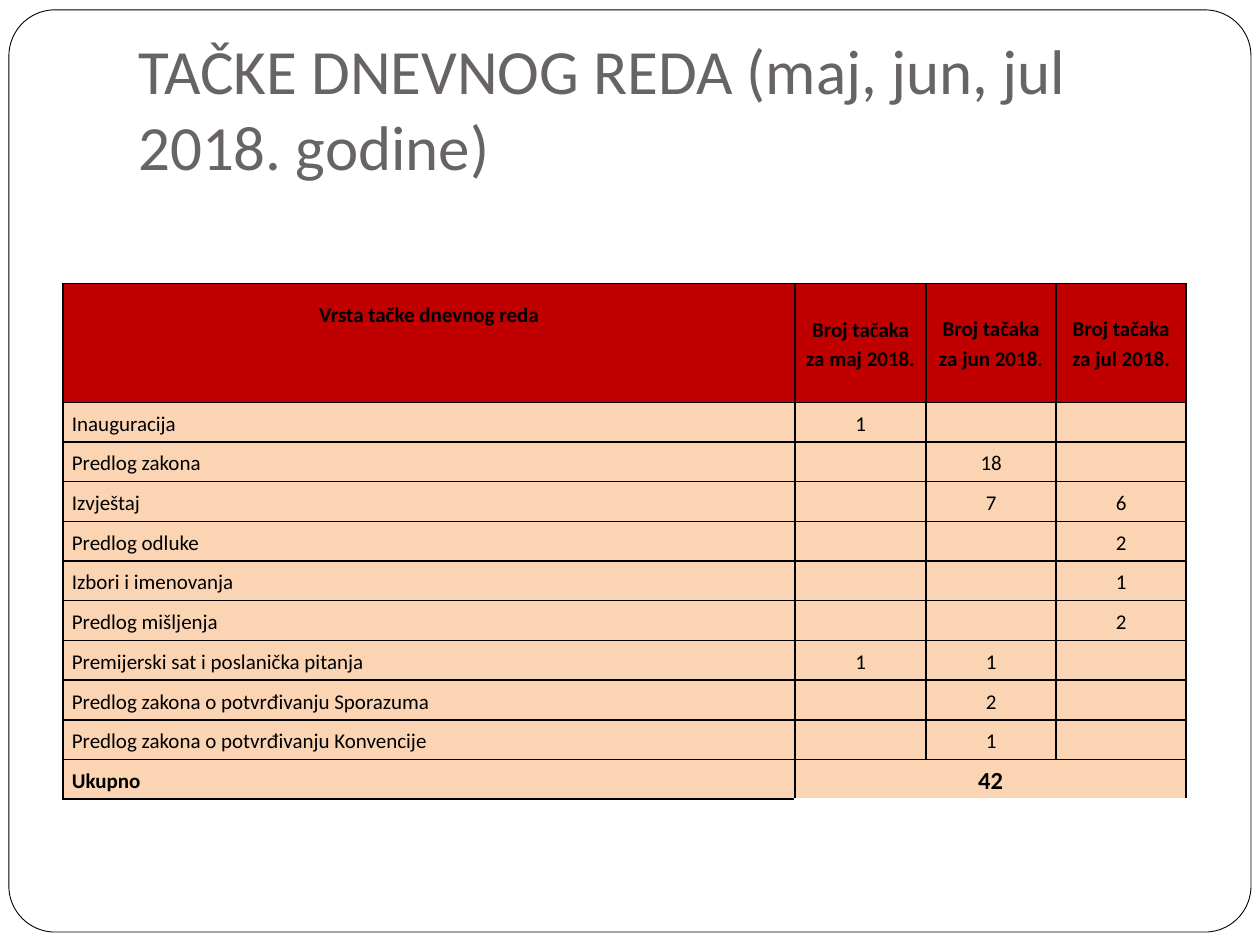
from dataclasses import dataclass

from lxml.etree import SubElement
from pptx import Presentation
from pptx.dml.color import RGBColor
from pptx.enum.shapes import MSO_SHAPE
from pptx.enum.text import MSO_ANCHOR, PP_ALIGN
from pptx.oxml.ns import qn
from pptx.util import Cm, Pt


@dataclass(frozen=True)
class Theme:
    font: str = "Calibri"
    ink: str = "000000"
    title: str = "696464"
    paper: str = "FFFFFF"
    head: str = "C00000"
    body: str = "FBD4B4"
    big: float = 36
    small: float = 12
    total: float = 14
    frame: float = 0.5
    rule: float = 1
    space: float = 1.15


@dataclass(frozen=True)
class Head:
    text: str
    anchor: MSO_ANCHOR
    top: float = 0


@dataclass(frozen=True)
class Row:
    name: str
    counts: tuple[str, str, str]


THEME = Theme()
WIDTHS = (14.76, 2.64, 2.62, 2.62)
HEAD_H, ROW_H = 2.39, 0.8
HEADS = (
    Head("Vrsta tačke dnevnog reda", MSO_ANCHOR.TOP, 0.3),
    Head("Broj tačaka za maj 2018.", MSO_ANCHOR.MIDDLE),
    Head("Broj tačaka za jun 2018.", MSO_ANCHOR.TOP, 0.59),
    Head("Broj tačaka za jul 2018.", MSO_ANCHOR.TOP, 0.59),
)
ROWS = (
    Row("Inauguracija", ("1", "", "")),
    Row("Predlog zakona", ("", "18", "")),
    Row("Izvještaj", ("", "7", "6")),
    Row("Predlog odluke", ("", "", "2")),
    Row("Izbori i imenovanja", ("", "", "1")),
    Row("Predlog mišljenja", ("", "", "2")),
    Row("Premijerski sat i poslanička pitanja", ("1", "1", "")),
    Row("Predlog zakona o potvrđivanju Sporazuma", ("", "2", "")),
    Row("Predlog zakona o potvrđivanju Konvencije", ("", "1", "")),
)


def color(code: str) -> RGBColor:
    return RGBColor.from_string(code)


def write(frame, text: str, *, size: float, ink: str = THEME.ink, bold: bool = False,
          align: PP_ALIGN = PP_ALIGN.LEFT, space: float = 1) -> None:
    line = frame.paragraphs[0]
    line.alignment = align
    line.line_spacing = space
    run = line.add_run()
    run.text = text
    font = run.font
    font.name, font.size, font.bold = THEME.font, Pt(size), bold
    font.color.rgb = color(ink)


def border(cell, sides: str) -> None:
    """Rule the given sides, named by L, R, T and B in that order."""
    props = cell._tc.get_or_add_tcPr()
    for side in sides:
        line = SubElement(props, qn(f"a:ln{side}"), w=str(Pt(THEME.rule)))
        fill = SubElement(line, qn("a:solidFill"))
        SubElement(fill, qn("a:srgbClr"), val=THEME.ink)


def fill_cell(cell, text: str, *, fill: str = THEME.body, sides: str = "LRTB",
              anchor: MSO_ANCHOR = MSO_ANCHOR.MIDDLE, top: float = 0,
              size: float = THEME.small, **style) -> None:
    border(cell, sides)
    cell.fill.solid()
    cell.fill.fore_color.rgb = color(fill)
    cell.margin_left = cell.margin_right = Cm(0.18)
    cell.margin_top, cell.margin_bottom = Cm(top), Cm(0)
    cell.vertical_anchor = anchor
    if text:
        write(cell.text_frame, text, size=size, space=THEME.space, **style)


def draw_frame(slide) -> None:
    box = slide.shapes.add_shape(MSO_SHAPE.ROUNDED_RECTANGLE,
                                 Cm(0.18), Cm(0.2), Cm(25.04), Cm(18.59))
    box.adjustments[0] = 0.05
    box.shadow.inherit = False
    box.fill.solid()
    box.fill.fore_color.rgb = color(THEME.paper)
    box.line.color.rgb = color(THEME.ink)
    box.line.width = Pt(THEME.frame)


def draw_title(slide) -> None:
    box = slide.shapes.add_textbox(Cm(2.54), Cm(0.76), Cm(21.59), Cm(3.18))
    frame = box.text_frame
    frame.word_wrap = True
    frame.vertical_anchor = MSO_ANCHOR.BOTTOM
    frame.margin_bottom = Cm(0.25)
    write(frame, "TAČKE DNEVNOG REDA (maj, jun, jul 2018. godine)",
          size=THEME.big, ink=THEME.title)


def draw_table(slide) -> None:
    last = len(ROWS) + 1
    table = slide.shapes.add_table(
        last + 1, len(WIDTHS), Cm(1.27), Cm(5.72),
        Cm(sum(WIDTHS)), Cm(HEAD_H + last * ROW_H)).table
    table.first_row = table.horz_banding = False
    for col, width in zip(table.columns, WIDTHS):
        col.width = Cm(width)
    for i, row in enumerate(table.rows):
        row.height = Cm(ROW_H if i else HEAD_H)

    for j, head in enumerate(HEADS):
        fill_cell(table.cell(0, j), head.text, fill=THEME.head, bold=True,
                  anchor=head.anchor, top=head.top, align=PP_ALIGN.CENTER)
    for i, row in enumerate(ROWS, 1):
        fill_cell(table.cell(i, 0), row.name)
        for j, count in enumerate(row.counts, 1):
            fill_cell(table.cell(i, j), count, align=PP_ALIGN.CENTER)

    fill_cell(table.cell(last, 0), "Ukupno", bold=True)
    table.cell(last, 1).merge(table.cell(last, 3))
    for j, text in enumerate(("42", "", ""), 1):
        fill_cell(table.cell(last, j), text, sides="LRT", bold=True,
                  size=THEME.total, align=PP_ALIGN.CENTER)


def main() -> None:
    deck = Presentation()
    deck.slide_width, deck.slide_height = Cm(25.4), Cm(19.05)
    slide = deck.slides.add_slide(deck.slide_layouts[6])
    draw_frame(slide)
    draw_title(slide)
    draw_table(slide)
    deck.save("out.pptx")


if __name__ == "__main__":
    main()
